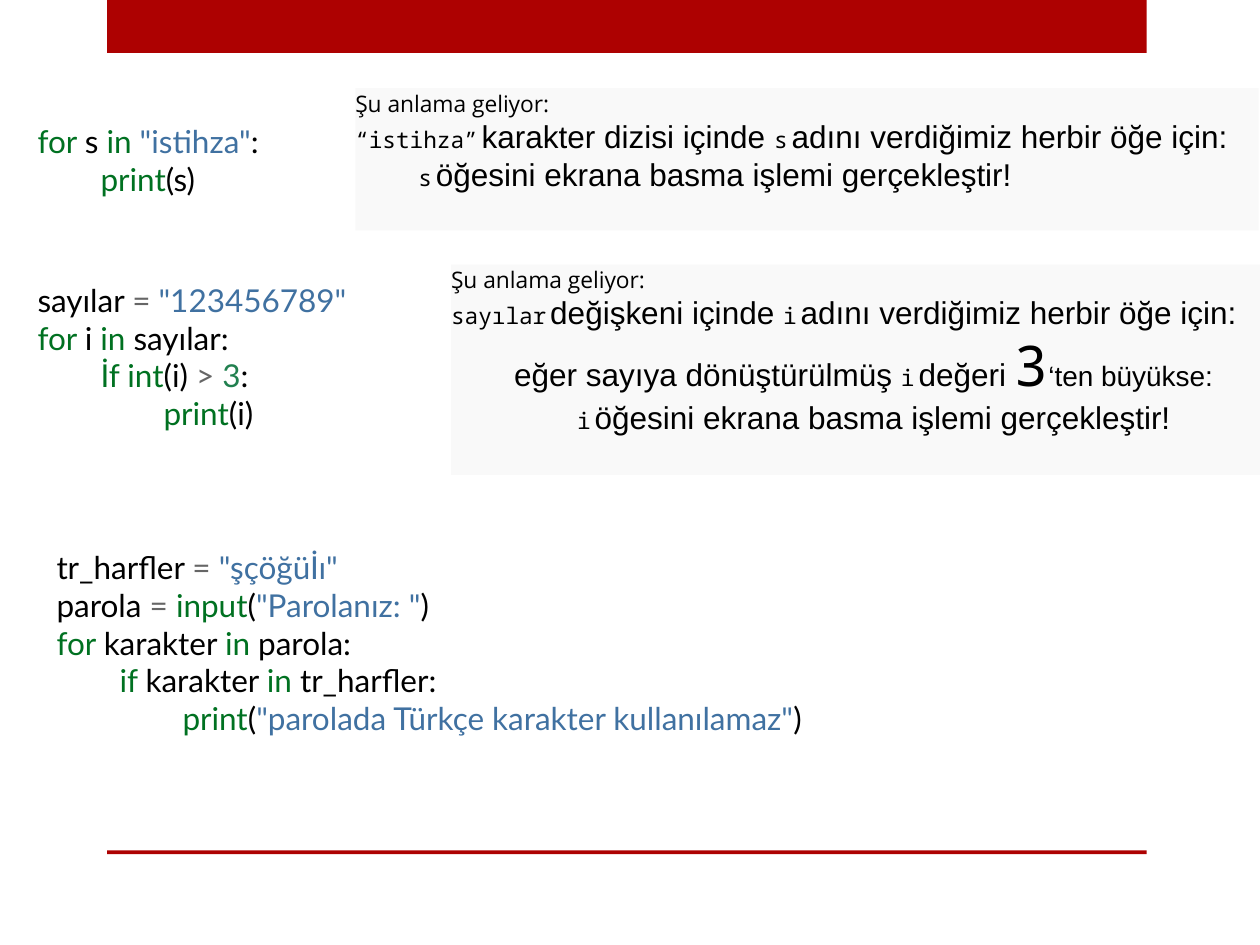
from pptx import Presentation
from pptx.dml.color import RGBColor
from pptx.enum.shapes import MSO_SHAPE
from pptx.enum.text import MSO_ANCHOR, PP_ALIGN
from pptx.util import Inches, Pt


def color(code):
    return RGBColor.from_string(code)


class Deck:
    red = "AD0101"
    pale = "F9F9F9"
    inks = {"key": "007121", "str": "4071A1", "op": "666666",
            "num": "21804F", "id": "000000"}
    faces = {"head": ("Open Sans", 13), "mono": ("Noto Sans Mono", 13),
             "big": ("Noto Sans Mono", 32), "gap": ("Arial", 8),
             "body": ("Arial", 18), "small": ("Arial", 16)}

    def __init__(self):
        self.show = Presentation()
        self.show.slide_width = Inches(10)
        self.show.slide_height = Inches(7.5)
        self.slide = self.show.slides.add_slide(self.show.slide_layouts[6])

    def rect(self, x, y, w, h, fill):
        shape = self.slide.shapes.add_shape(
            MSO_SHAPE.RECTANGLE, Inches(x), Inches(y), Inches(w), Inches(h))
        shape.shadow.inherit = False
        shape.fill.solid()
        shape.fill.fore_color.rgb = color(fill)
        shape.line.fill.background()
        return shape

    def line(self, frame, first):
        para = frame.paragraphs[0] if first else frame.add_paragraph()
        para.alignment = PP_ALIGN.LEFT
        return para

    def run(self, para, text, face, size, ink):
        run = para.add_run()
        run.text = text
        run.font.name = face
        run.font.size = Pt(size)
        run.font.color.rgb = color(ink)

    def code(self, x, y, w, h, lines):
        box = self.slide.shapes.add_textbox(
            Inches(x), Inches(y), Inches(w), Inches(h))
        frame = box.text_frame
        frame.word_wrap = True
        for row, parts in enumerate(lines):
            para = self.line(frame, row == 0)
            for kind, text in parts:
                self.run(para, text, "Lato", 18, self.inks[kind])

    def note(self, x, y, w, h, lines):
        frame = self.rect(x, y, w, h, self.pale).text_frame
        frame.word_wrap = True
        frame.vertical_anchor = MSO_ANCHOR.TOP
        frame.margin_left = frame.margin_right = 0
        frame.margin_top = frame.margin_bottom = Inches(0.01)
        for row, (level, parts) in enumerate(lines):
            para = self.line(frame, row == 0)
            para.level = level
            props = para._p.get_or_add_pPr()
            props.set("marL", str(Inches(level * 0.5)))
            props.set("indent", "0")
            for kind, text in parts:
                self.run(para, text, *self.faces[kind], self.inks["id"])

    def save(self):
        self.show.save("out.pptx")


def main():
    deck = Deck()
    for y, h in ((0, 0.42), (6.75, 0.03)):
        deck.rect(0.85, y, 8.25, h, deck.red)

    deck.code(0.2, 0.92, 5, 0.71, [
        [("key", "for "), ("id", "s "), ("key", "in "),
         ("str", '"istihza"'), ("id", ":")],
        [("key", "\tprint"), ("id", "(s)")],
    ])
    deck.code(0.2, 2.18, 5, 1.31, [
        [("id", "sayılar "), ("op", "= "), ("str", '"123456789"')],
        [("key", "for "), ("id", "i "), ("key", "in "), ("id", "sayılar:")],
        [("key", "\tİf int"), ("id", "(i) "), ("op", "> "),
         ("num", "3"), ("id", ":")],
        [("key", "\t\tprint"), ("id", "(i)")],
    ])
    deck.code(0.35, 4.3, 7.48, 1.62, [
        [("id", "tr_harfler "), ("op", "= "), ("str", '"şçöğüİı"')],
        [("id", "parola "), ("op", "= "), ("key", "input"), ("id", "("),
         ("str", '"Parolanız: "'), ("id", ")")],
        [("key", "for "), ("id", "karakter "), ("key", "in "),
         ("id", "parola:")],
        [("key", "\tif "), ("id", "karakter "), ("key", "in "),
         ("id", "tr_harfler:")],
        [("key", "\t\tprint"), ("id", "("),
         ("str", '"parolada Türkçe karakter kullanılamaz"'), ("id", ")")],
    ])

    gap = ("gap", " ")
    head = (0, [("head", "Şu anlama geliyor:")])
    each = ("body", "adını verdiğimiz herbir öğe için:")
    act = ("body", "öğesini ekrana basma işlemi gerçekleştir!")
    deck.note(2.82, 0.7, 7.17, 1.13, [
        head,
        (0, [("mono", "“istihza”"), gap, ("body", "karakter dizisi içinde "),
             ("mono", "s"), gap, each]),
        (1, [("mono", "s"), gap, act]),
    ])
    deck.note(3.58, 2.1, 6.42, 1.67, [
        head,
        (0, [("mono", "sayılar"), gap, ("body", "değişkeni içinde "),
             ("mono", "i"), gap, each]),
        (1, [("body", "eğer sayıya dönüştürülmüş "), ("mono", "i"), gap,
             ("body", "değeri "), ("big", "3"), ("small", "‘ten büyükse:")]),
        (2, [("mono", "i"), gap, act]),
    ])
    deck.save()


if __name__ == "__main__":
    main()
